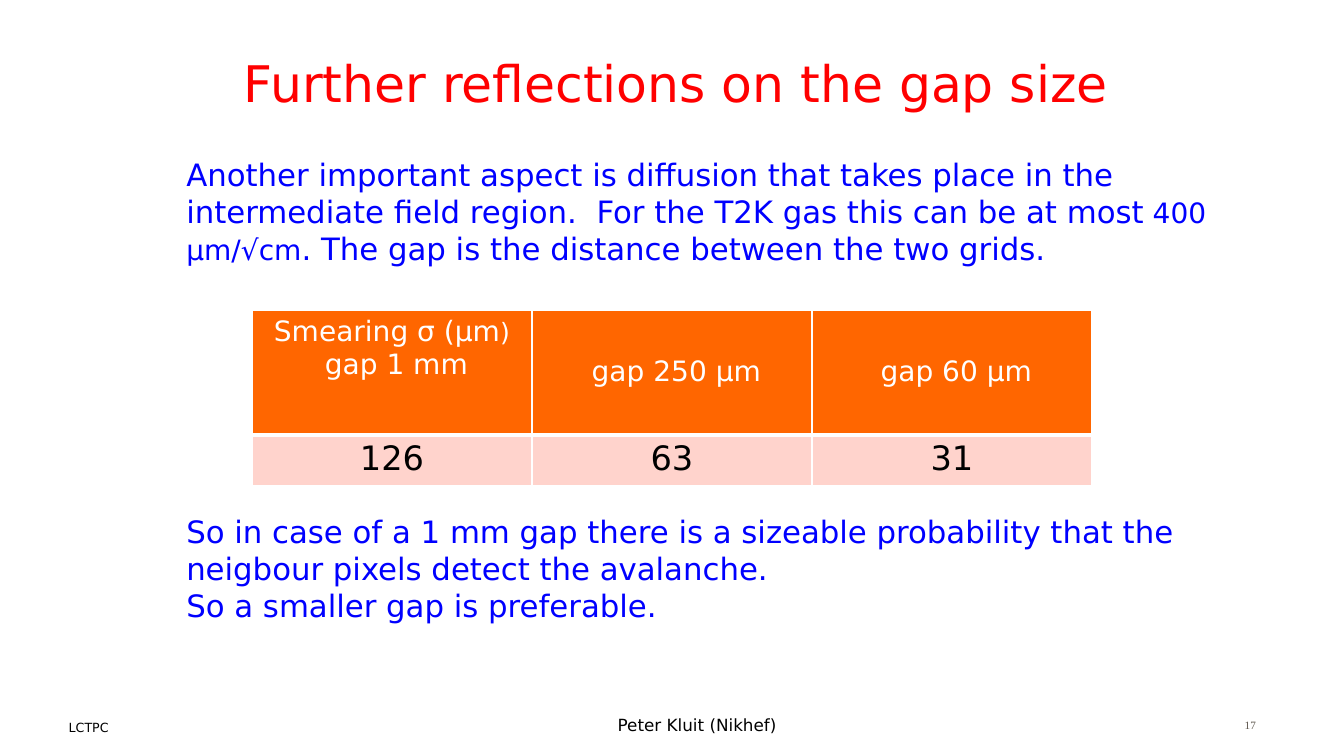
"""Build the slide on the gap size, laid out on a grid of 32 columns by 18 rows."""
from dataclasses import dataclass

from lxml import etree
from pptx import Presentation
from pptx import util as u
from pptx.dml.color import RGBColor
from pptx.enum import text
from pptx.oxml import ns

COLUMNS, ROWS = 32, 18
WIDTH, HEIGHT = u.Inches(13.33), u.Inches(7.5)
SANS, SERIF = "DejaVu Sans", "Times New Roman"
RED, BLUE, WHITE, BLACK = "FF0000", "0000FF", "FFFFFF", "000000"
GREY, ORANGE, PINK = "5E574E", "FF6600", "FFD3CC"
LEFT, CENTER, RIGHT = text.PP_ALIGN.LEFT, text.PP_ALIGN.CENTER, text.PP_ALIGN.RIGHT
TOP, BOTTOM = text.MSO_ANCHOR.TOP, text.MSO_ANCHOR.BOTTOM

Line = list[tuple[str, float]]


@dataclass
class Block:
    col: float
    row: float
    cols: float
    rows: float
    lines: list[Line]
    color: str = BLACK
    align: text.PP_ALIGN = LEFT
    anchor: text.MSO_ANCHOR = BOTTOM
    font: str = SANS


@dataclass
class Column:
    header: list[Line]
    top: float
    value: str


BLOCKS = [
    Block(11.4, 16.56, 10.4, 1.06, [[("Peter Kluit (Nikhef)", 12)]], align=CENTER),
    Block(23.47, 16.34, 6.67, 1.2, [[("17", 8)]], GREY, RIGHT, font=SERIF),
    Block(1.4, 16.97, 12.9, 0.65, [[("LCTPC", 9)]]),
    Block(2.5, 0.7, 27.2, 2.1, [[("Further reflections on the gap size", 36)]], RED, CENTER),
    Block(4.2, 3.6, 25.8, 2.8, [
        [("Another important aspect is diffusion that takes place in the", 22)],
        [("intermediate field region.  For the T2K gas this can be at most", 22),
         (" 400 μm/√cm", 20),
         (". The gap is the distance between the two grids.", 22)],
    ], BLUE, anchor=TOP),
    Block(4.2, 12.1, 25.8, 2.8, [
        [("So in case of a 1 mm gap there is a sizeable probability that the", 22)],
        [("neigbour pixels detect the avalanche.", 22)],
        [("So a smaller gap is preferable.", 22)],
    ], BLUE, anchor=TOP),
]

TABLE = [
    Column([[("Smearing σ (μm", 20), (")", 18)], [(" gap 1 mm", 20)]], 0.05, "126"),
    Column([[(" gap 250 μm", 20)]], 0.44, "63"),
    Column([[(" gap 60 μm", 20)]], 0.44, "31"),
]


def x(cols: float) -> int:
    return round(WIDTH * cols / COLUMNS)


def y(rows: float) -> int:
    return round(HEIGHT * rows / ROWS)


def rgb(color: str) -> RGBColor:
    return RGBColor.from_string(color)


def write(tf, lines: list[Line], *, color: str, align=LEFT, font: str = SANS) -> None:
    for i, line in enumerate(lines):
        p = tf.paragraphs[0] if i == 0 else tf.add_paragraph()
        p.alignment = align
        for words, size in line:
            r = p.add_run()
            r.text = words
            r.font.size = u.Pt(size)
            r.font.name = font
            r.font.bold = False
            r.font.color.rgb = rgb(color)


def draw_block(s, b: Block) -> None:
    sp = s.shapes.add_textbox(x(b.col), y(b.row), x(b.cols), y(b.rows))
    tf = sp.text_frame
    tf.word_wrap = True
    tf.vertical_anchor = b.anchor
    write(tf, b.lines, color=b.color, align=b.align, font=b.font)


def set_borders(cell, **widths: float) -> None:
    tc_pr = cell._tc.get_or_add_tcPr()
    for i, (side, width) in enumerate(widths.items()):
        ln = etree.Element(ns.qn(f"a:ln{side}"), w=str(u.Pt(width)))
        fill = etree.SubElement(ln, ns.qn("a:solidFill"))
        etree.SubElement(fill, ns.qn("a:srgbClr"), val=WHITE)
        tc_pr.insert(i, ln)


def draw_cell(cell, lines: list[Line], *, fill: str, color: str, top: float = 0.05,
              above: float = 1, below: float = 1) -> None:
    cell.fill.solid()
    cell.fill.fore_color.rgb = rgb(fill)
    cell.margin_top = u.Inches(top)
    write(cell.text_frame, lines, color=color, align=CENTER)
    set_borders(cell, L=1, R=1, T=above, B=below)


def draw_table(s, columns: list[Column]) -> None:
    heights = (2.95, 1.2)
    frame = s.shapes.add_table(2, len(columns), x(6), y(7.4), x(20), y(sum(heights)))
    table = frame.table
    table.horz_banding = False
    for row, height in zip(table.rows, heights):
        row.height = y(height)
    for i, column in enumerate(columns):
        table.columns[i].width = x(20 / len(columns))
        draw_cell(table.cell(0, i), column.header, fill=ORANGE, color=WHITE,
                  top=column.top, below=3)
        draw_cell(table.cell(1, i), [[(column.value, 24)]], fill=PINK, color=BLACK, above=3)


def main() -> None:
    prs = Presentation()
    prs.slide_width, prs.slide_height = WIDTH, HEIGHT
    s = prs.slides.add_slide(prs.slide_layouts[6])
    for block in BLOCKS:
        draw_block(s, block)
    draw_table(s, TABLE)
    prs.save("out.pptx")


if __name__ == "__main__":
    main()
